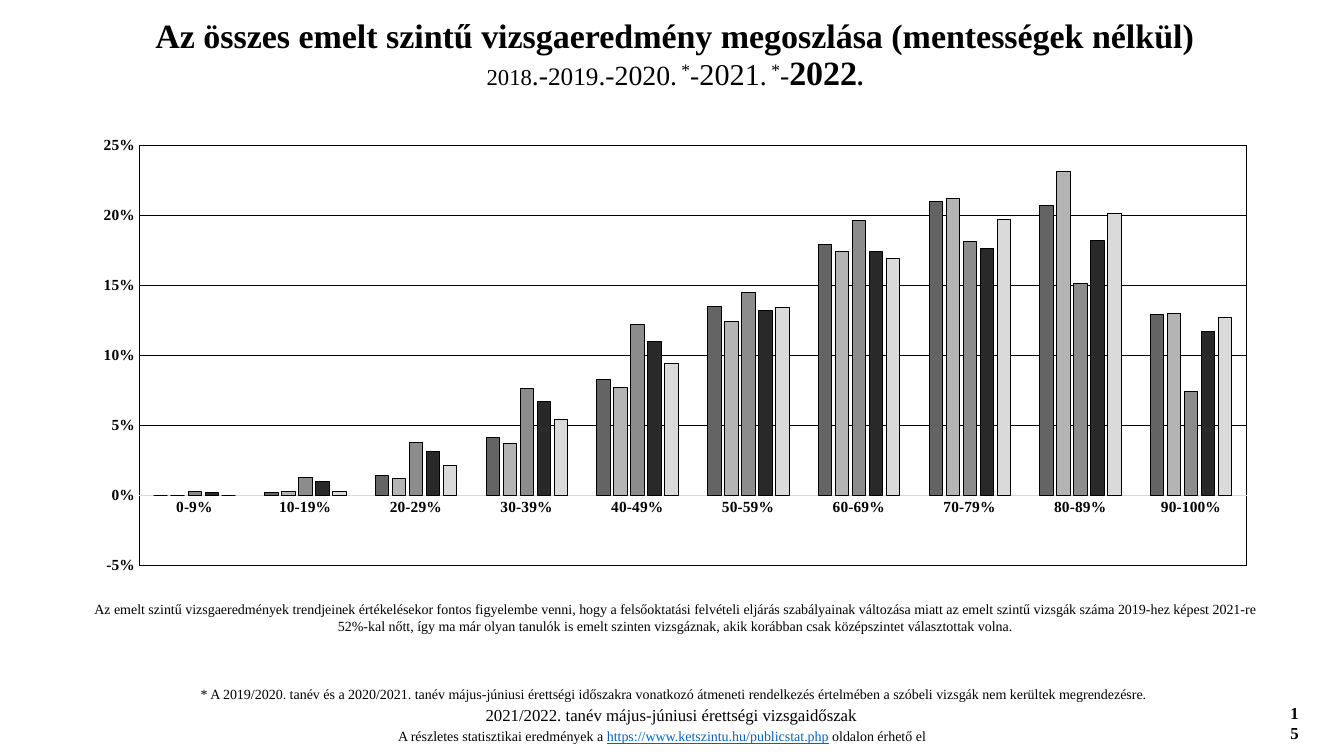
from lxml import etree
from pptx import Presentation
from pptx import oxml
from pptx import util as u
from pptx.chart import data as chart_data
from pptx.dml import color
from pptx.enum import chart as chart_enum
from pptx.enum import text
from pptx.oxml import ns

FONT = "Times New Roman"
BLACK, WHITE, LINK_BLUE, AXIS_GREY = "000000", "FFFFFF", "0563C1", "D9D9D9"
LEFT, WIDTH = 0.79, 11.81
CATEGORIES = ["0-9%", "10-19%", "20-29%", "30-39%", "40-49%",
              "50-59%", "60-69%", "70-79%", "80-89%", "90-100%"]
YEARS = [
    ("Series 1", "646464", [0, 0.002, 0.014, 0.041, 0.083, 0.135, 0.179, 0.21, 0.207, 0.129]),
    ("Series 2", "B4B4B4", [0, 0.003, 0.012, 0.037, 0.077, 0.124, 0.174, 0.212, 0.231, 0.13]),
    ("Series 3", "8C8C8C", [0.003, 0.013, 0.038, 0.076, 0.122, 0.145, 0.196, 0.181, 0.151, 0.074]),
    ("Series 4", "292929", [0.002, 0.01, 0.031, 0.067, 0.11, 0.132, 0.174, 0.176, 0.182, 0.117]),
    ("Series 5", "DADADA", [0, 0.003, 0.021, 0.054, 0.094, 0.134, 0.169, 0.197, 0.201, 0.127]),
]
TITLE = "Az összes emelt szintű vizsgaeredmény megoszlása (mentességek nélkül)"
YEAR_RUNS = [("2018", 16.2), (".-", 19.8), ("2019", 18), (".-2020.", 19.8), (" *", 21.6),
             ("-", 19.8), ("2021", 21.6), (".", 19.8), (" *", 21.6), ("-", 19.8)]
TREND_NOTE = (
    "Az emelt szintű vizsgaeredmények trendjeinek értékelésekor fontos figyelembe venni, "
    "hogy a felsőoktatási felvételi eljárás szabályainak változása miatt az emelt szintű "
    "vizsgák száma 2019-hez képest 2021-re 52%-kal nőtt, így ma már olyan tanulók is emelt "
    "szinten vizsgáznak, akik korábban csak középszintet választottak volna.")
ORAL_NOTE = (
    "* A 2019/2020. tanév és a 2020/2021. tanév május-júniusi érettségi időszakra vonatkozó "
    "átmeneti rendelkezés értelmében a szóbeli vizsgák nem kerültek megrendezésre. ")


def rgb(value):
    return color.RGBColor.from_string(value)


def format_font(font, size, bold=False, colour=BLACK):
    font.name, font.size, font.bold = FONT, u.Pt(size), bold
    font.color.rgb = rgb(colour)


def format_line(line, colour, width):
    line.color.rgb = rgb(colour)
    line.width = u.Pt(width)


def add_run(paragraph, words, size=10, bold=False, colour=BLACK, underline=False, raised=False):
    run = paragraph.add_run()
    run.text = words
    format_font(run.font, size, bold, colour)
    if underline:
        run.font.underline = True
    if raised:
        run._r.get_or_add_rPr().set("baseline", "30000")


def add_text(slide, box, words="", align=text.PP_ALIGN.CENTER, **style):
    """Add a wrapped text box and return its first paragraph."""
    frame = slide.shapes.add_textbox(*map(u.Inches, box)).text_frame
    frame.word_wrap = True
    paragraph = frame.paragraphs[0]
    paragraph.alignment = align
    if words:
        add_run(paragraph, words, **style)
    return paragraph


def fill_title(slide, box):
    title = slide.shapes.title
    title.left, title.top, title.width, title.height = map(u.Inches, box)
    frame = title.text_frame
    frame.word_wrap = True
    frame.auto_size = text.MSO_AUTO_SIZE.NONE
    frame.vertical_anchor = text.MSO_ANCHOR.MIDDLE
    paragraph = frame.paragraphs[0]
    paragraph.alignment = text.PP_ALIGN.CENTER
    paragraph.line_spacing = 0.9
    add_run(paragraph, TITLE, size=24.3, bold=True)
    paragraph.add_line_break()
    for words, size in YEAR_RUNS:
        add_run(paragraph, words, size=size, raised="*" in words)
    add_run(paragraph, "2022", size=24.3, bold=True)
    add_run(paragraph, ".", size=18, bold=True)


def frame_plot(chart, x, y, width, height):
    """Place the inner plot area by fractions of the chart and outline it."""
    plot_area = chart._chartSpace.chart.plotArea
    for layout in plot_area.findall(ns.qn("c:layout")):
        plot_area.remove(layout)
    sizes = "".join(f'<c:{tag} val="{value}"/>' for tag, value in
                    zip("xywh", (x, y, width, height)))
    plot_area.insert(0, oxml.parse_xml(
        f'<c:layout {ns.nsdecls("c")}><c:manualLayout><c:layoutTarget val="inner"/>'
        f'<c:xMode val="edge"/><c:yMode val="edge"/>{sizes}</c:manualLayout></c:layout>'))
    properties = etree.SubElement(plot_area, ns.qn("c:spPr"))
    properties.append(oxml.parse_xml(
        f'<a:solidFill {ns.nsdecls("a")}><a:srgbClr val="{WHITE}"/></a:solidFill>'))
    properties.append(oxml.parse_xml(
        f'<a:ln {ns.nsdecls("a")} w="{u.Pt(0.75)}"><a:solidFill>'
        f'<a:srgbClr val="{BLACK}"/></a:solidFill></a:ln>'))


def add_results_chart(slide, box):
    results = chart_data.CategoryChartData(number_format="0.0%")
    results.categories = CATEGORIES
    for name, _, values in YEARS:
        results.add_series(name, values)
    chart = slide.shapes.add_chart(
        chart_enum.XL_CHART_TYPE.COLUMN_CLUSTERED, *map(u.Inches, box), results).chart
    chart.has_legend = chart.has_title = False
    format_font(chart.font, 10, bold=True)

    plot = chart.plots[0]
    plot.gap_width, plot.overlap, plot.vary_by_categories = 219, -27, False
    for series, (_, colour, _) in zip(plot.series, YEARS):
        series.format.fill.solid()
        series.format.fill.fore_color.rgb = rgb(colour)
        format_line(series.format.line, BLACK, 0.5)

    for axis in (chart.category_axis, chart.value_axis):
        axis.major_tick_mark = axis.minor_tick_mark = chart_enum.XL_TICK_MARK.NONE
        format_font(axis.tick_labels.font, 11, bold=True)
    format_line(chart.category_axis.format.line, AXIS_GREY, 0.75)

    percent = chart.value_axis
    percent.minimum_scale, percent.maximum_scale, percent.major_unit = -0.05, 0.25, 0.05
    percent.tick_labels.number_format = "0%"
    percent.tick_labels.number_format_is_linked = False
    percent.format.line.fill.background()
    percent.has_major_gridlines = True
    format_line(percent.major_gridlines.format.line, BLACK, 0.5)
    frame_plot(chart, 0.05, 0.04, 0.93, 0.92)


def add_footer(slide, left, top):
    add_text(slide, (left, top, WIDTH, 0.27), ORAL_NOTE)
    add_text(slide, (left + 2.8, top + 0.19, 6.14, 0.3),
             "2021/2022. tanév május-júniusi érettségi vizsgaidőszak", size=12)
    add_text(slide, (left + 11.91, top + 0.17, 0.29, 0.3), "15",
             align=text.PP_ALIGN.LEFT, size=12, bold=True)
    source = add_text(slide, (left + 3.06, top + 0.42, 5.63, 0.27), align=text.PP_ALIGN.LEFT)
    add_run(source, "A részletes statisztikai eredmények a ")
    add_run(source, "https://www.ketszintu.hu/publicstat.php", colour=LINK_BLUE, underline=True)
    add_run(source, " oldalon érhető el")


def main():
    presentation = Presentation()
    presentation.slide_width, presentation.slide_height = u.Inches(13.33), u.Inches(7.5)
    slide = presentation.slides.add_slide(presentation.slide_layouts.get_by_name("Title Only"))
    fill_title(slide, (LEFT, 0.2, WIDTH, 0.71))
    add_results_chart(slide, (LEFT, 1.26, WIDTH, 4.53))
    add_text(slide, (LEFT, 5.91, WIDTH, 0.44), TREND_NOTE)
    add_footer(slide, LEFT, 6.75)
    presentation.save("out.pptx")


if __name__ == "__main__":
    main()
